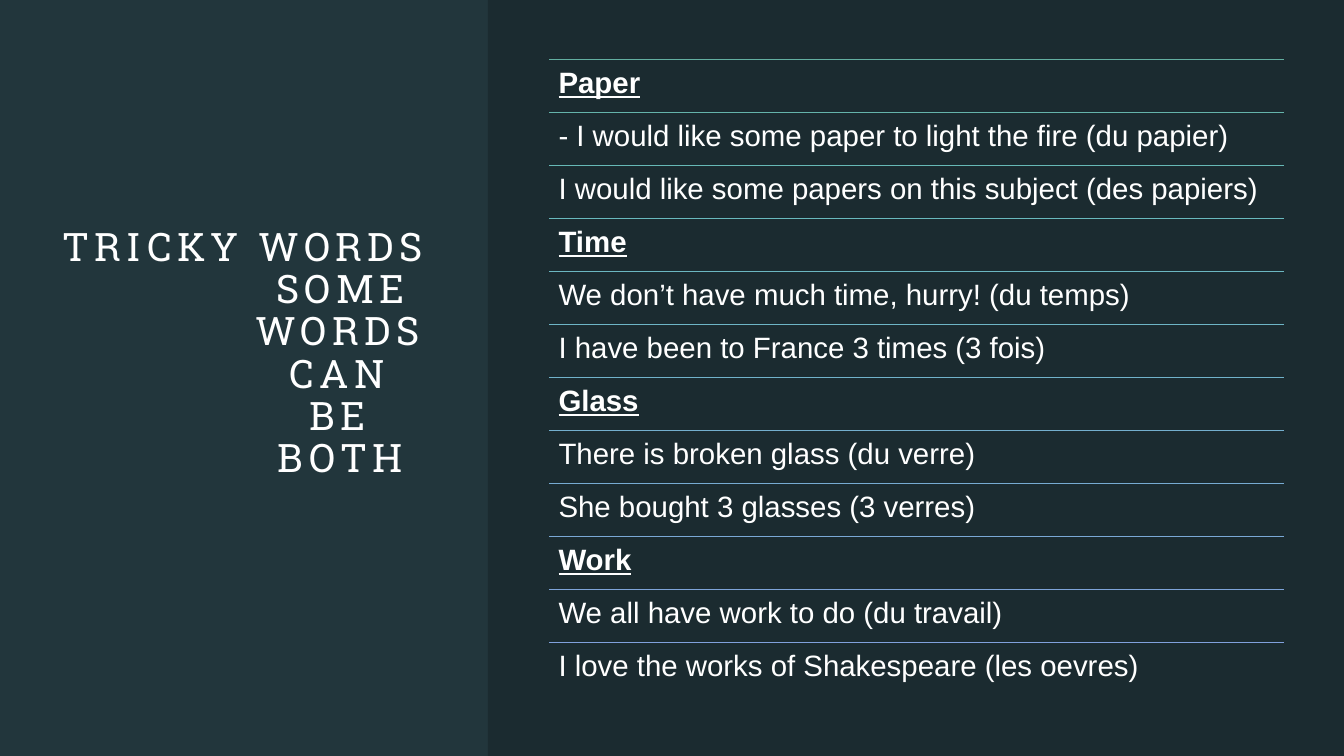
from dataclasses import dataclass

from lxml import etree
from pptx import Presentation, util as u
from pptx.dml.color import RGBColor
from pptx.enum import shapes, text
from pptx.oxml.ns import qn


@dataclass(frozen=True)
class Theme:
    back: str = "22363C"
    shade: str = "000000"
    ink: str = "FFFFFF"
    rules: tuple[str, ...] = (
        "63AFA1", "65B4AB", "67B9B6", "69B9BD", "6CB7C1", "6EB5C6",
        "71B2CA", "74AFCE", "77ABD2", "7AA8D5", "7EA4D9", "81A1DC")
    head: str = "Roboto Slab"
    body: str = "Arial"
    big: int = 28
    small: int = 21


@dataclass(frozen=True)
class Box:
    """Left, top, width and height in percent of the slide."""
    x: float
    y: float
    w: float
    h: float


@dataclass(frozen=True)
class Topic:
    word: str
    uses: tuple[str, ...]


THEME = Theme()
WIDE, HIGH = u.Inches(13.33), u.Inches(7.5)
TITLE = Box(4.43, 15.73, 27.23, 68.4)
PANEL = Box(36.31, 0, 63.69, 100)
LIST = Box(40.88, 7.87, 54.69, 84.13)

TOPICS = (
    Topic("Paper", ("- I would like some paper to light the fire (du papier)",
                    "I would like some papers on this subject (des papiers)")),
    Topic("Time", ("We don’t have much time, hurry! (du temps)",
                   "I have been to France 3 times (3 fois)")),
    Topic("Glass", ("There is broken glass (du verre)",
                    "She bought 3 glasses (3 verres)")),
    Topic("Work", ("We all have work to do (du travail)",
                   "I love the works of Shakespeare (les oevres)")),
)


def place(box: Box) -> tuple[int, int, int, int]:
    return (round(WIDE * box.x / 100), round(HIGH * box.y / 100),
            round(WIDE * box.w / 100), round(HIGH * box.h / 100))


def tint(name: str) -> RGBColor:
    return RGBColor.from_string(name)


def write(frame, lines: tuple[str, ...], *, font: str, size: int,
          pads: tuple[float, float, float, float], strong: bool = False,
          align=text.PP_ALIGN.LEFT, anchor=text.MSO_ANCHOR.TOP,
          track: int = 0) -> None:
    """Fill a text frame, one paragraph a line; pads are inches, l t r b."""
    frame.word_wrap = True
    frame.auto_size = text.MSO_AUTO_SIZE.NONE
    frame.vertical_anchor = anchor
    (frame.margin_left, frame.margin_top,
     frame.margin_right, frame.margin_bottom) = map(u.Inches, pads)
    for i, line in enumerate(lines):
        para = frame.paragraphs[0] if i == 0 else frame.add_paragraph()
        para.alignment, para.line_spacing = align, 0.9
        run = para.add_run()
        run.text = line
        run.font.name, run.font.size = font, u.Pt(size)
        run.font.bold = run.font.underline = strong
        run.font.color.rgb = tint(THEME.ink)
        if track:
            run.font._element.set("spc", str(track * 100))


def draw_title(slide) -> None:
    title = slide.shapes.title
    title.left, title.top, title.width, title.height = place(TITLE)
    frame = title.text_frame
    write(frame, ("TRICKY WORDS", "SOME", "WORDS CAN BE BOTH"),
          font=THEME.head, size=THEME.big, pads=(0, 0, 0, 0.46), track=4,
          align=text.PP_ALIGN.CENTER, anchor=text.MSO_ANCHOR.MIDDLE)
    # The second line is pushed to the right
    frame.paragraphs[1]._p.get_or_add_pPr().set("marL", str(u.Inches(1.94)))


def draw_panel(slide) -> None:
    panel = slide.shapes.add_shape(shapes.MSO_SHAPE.RECTANGLE, *place(PANEL))
    panel.shadow.inherit = False
    panel.line.fill.background()
    panel.fill.solid()
    panel.fill.fore_color.rgb = tint(THEME.shade)
    shade = panel.fill._xPr.find(qn("a:solidFill"))[0]
    etree.SubElement(shade, qn("a:alpha")).set("val", "20000")


def draw_row(group, box: Box, line: str, rule: str, strong: bool) -> None:
    x, y, w, h = place(box)
    edge = group.shapes.add_connector(
        shapes.MSO_CONNECTOR.STRAIGHT, x, y, x + w, y)
    edge.line.color.rgb, edge.line.width = tint(rule), u.Pt(0.75)
    etree.SubElement(edge._element.spPr, qn("a:effectLst"))
    label = group.shapes.add_textbox(x, y, w, h)
    write(label.text_frame, (line,), font=THEME.body, size=THEME.small,
          pads=(0.09,) * 4, strong=strong)


def draw_list(slide) -> None:
    rows = [(line, line == topic.word)
            for topic in TOPICS for line in (topic.word, *topic.uses)]
    step = LIST.h / len(rows)
    group = slide.shapes.add_group_shape()
    for i, ((line, strong), rule) in enumerate(zip(rows, THEME.rules)):
        box = Box(LIST.x, LIST.y + i * step, LIST.w, step)
        draw_row(group, box, line, rule, strong)


def main() -> None:
    deck = Presentation()
    deck.slide_width, deck.slide_height = WIDE, HIGH
    slide = deck.slides.add_slide(deck.slide_layouts[5])
    # Background
    slide.background.fill.solid()
    slide.background.fill.fore_color.rgb = tint(THEME.back)
    # Title on the left, word list on the shaded right
    draw_title(slide)
    draw_panel(slide)
    draw_list(slide)
    deck.save("out.pptx")


if __name__ == "__main__":
    main()
